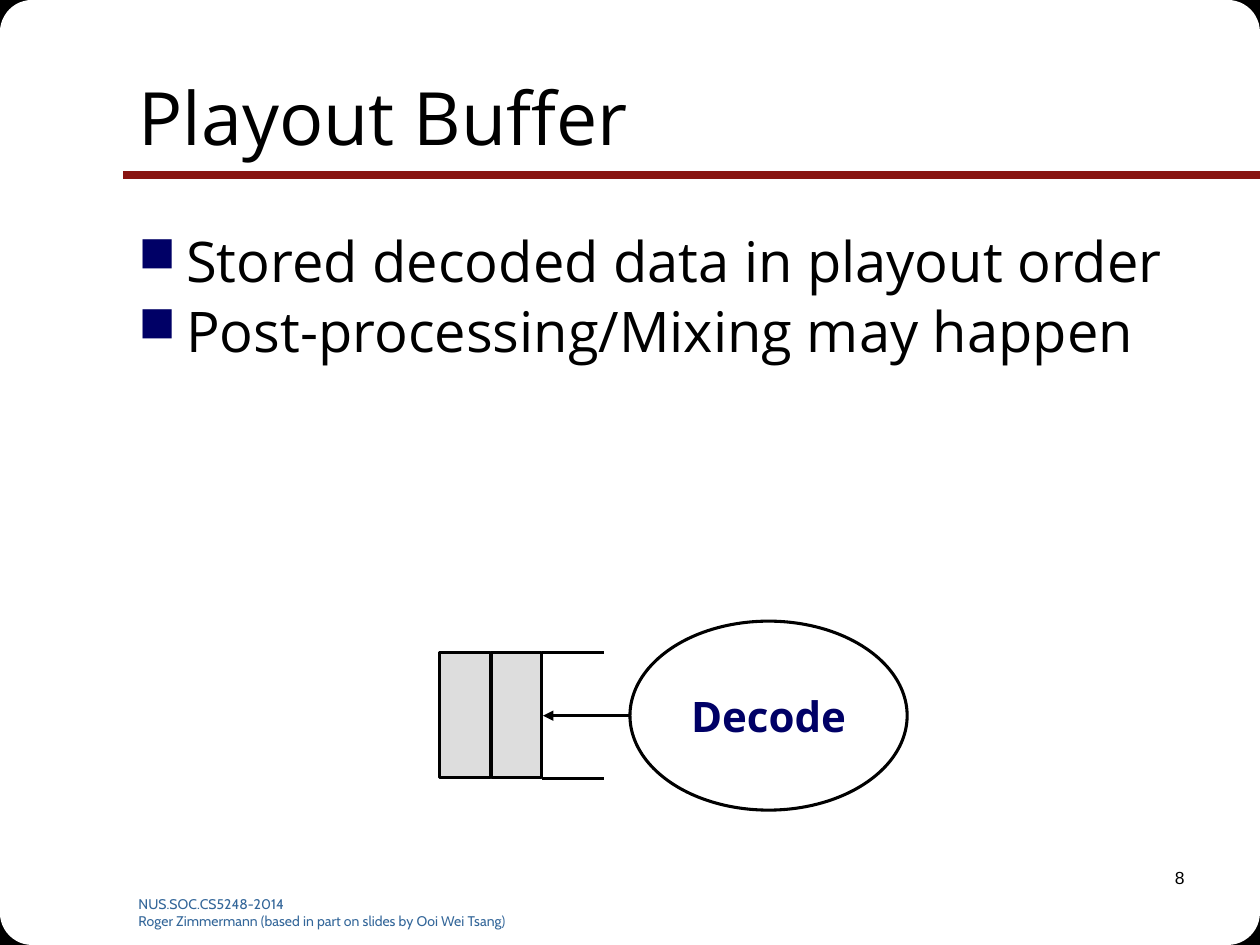
from dataclasses import dataclass
from itertools import product

from lxml import etree
from pptx import Presentation
from pptx.dml.color import RGBColor
from pptx.enum.shapes import MSO_CONNECTOR, MSO_SHAPE
from pptx.enum.text import MSO_ANCHOR, PP_ALIGN
from pptx.oxml.ns import qn
from pptx.util import Inches, Pt

RECT, ROUND, OVAL = MSO_SHAPE.RECTANGLE, MSO_SHAPE.ROUNDED_RECTANGLE, MSO_SHAPE.OVAL
LEFT, CENTER, RIGHT = PP_ALIGN.LEFT, PP_ALIGN.CENTER, PP_ALIGN.RIGHT
TOP, MIDDLE = MSO_ANCHOR.TOP, MSO_ANCHOR.MIDDLE
STRAIGHT = MSO_CONNECTOR.STRAIGHT
BLACK, WHITE, NAVY, RED, BLUE, GRAY = "000000", "FFFFFF", "000066", "891411", "336699", "DDDDDD"
WIDE, HIGH = 10, 7.5


@dataclass
class Box:
    x: float
    y: float
    w: float
    h: float

    def lengths(self):
        return [Inches(v) for v in (self.x, self.y, self.w, self.h)]


@dataclass
class Line:
    x1: float
    y1: float
    x2: float
    y2: float
    color: str = BLACK
    width: float = 1.75
    arrow: bool = False


def paint(target, color: str):
    target.rgb = RGBColor.from_string(color)


def write(shape, text: str, *, size: float, font="Open Sans", color=BLACK, bold=False,
          align=LEFT, anchor=TOP, wrap=True, before=0.0):
    frame = shape.text_frame
    frame.word_wrap = wrap
    frame.vertical_anchor = anchor
    frame.text = text
    for para in frame.paragraphs:
        para.alignment = align
        para.space_before = Pt(before)
        para.font.size = Pt(size)
        para.font.name = font
        para.font.bold = bold
        paint(para.font.color, color)


def bullet(para, color: str):
    props = para._p.get_or_add_pPr()
    props.set("marL", str(Inches(0.38)))
    props.set("indent", str(-Inches(0.38)))
    tint = etree.SubElement(props, qn("a:buClr"))
    etree.SubElement(tint, qn("a:srgbClr"), val=color)
    etree.SubElement(props, qn("a:buSzPct"), val="90000")
    etree.SubElement(props, qn("a:buChar"), char="■")


def draw_shape(slide, kind, box: Box, fill: str, edge="", width=1.75):
    shape = slide.shapes.add_shape(kind, *box.lengths())
    shape.shadow.inherit = False
    shape.fill.solid()
    paint(shape.fill.fore_color, fill)
    if edge:
        paint(shape.line.color, edge)
        shape.line.width = Pt(width)
    else:
        shape.line.fill.background()
    return shape


def draw_line(slide, line: Line):
    ends = [Inches(v) for v in (line.x1, line.y1, line.x2, line.y2)]
    link = slide.shapes.add_connector(STRAIGHT, *ends)
    paint(link.line.color, line.color)
    link.line.width = Pt(line.width)
    if line.arrow:
        etree.SubElement(link.line._get_or_add_ln(), qn("a:tailEnd"), type="triangle")
    etree.SubElement(link._element.spPr, qn("a:effectLst"))


def draw_corners(slide):
    for kind, w, h, fill, edge in ((RECT, 0.43, 0.44, BLACK, BLACK), (ROUND, 1.53, 1.53, WHITE, "")):
        for x, y in product((0, WIDE - w), (0, HIGH - h)):
            draw_shape(slide, kind, Box(x, y, w, h), fill, edge, 0.75)


def draw_text(slide, box: Box, text: str, **style):
    area = slide.shapes.add_textbox(*box.lengths())
    write(area, text, **style)
    return area


def draw_buffer(slide):
    oval = draw_shape(slide, OVAL, Box(5, 4.93, 2.2, 1.5), WHITE, BLACK)
    write(oval, "Decode", size=24, color=NAVY, bold=True, align=CENTER, anchor=MIDDLE, wrap=False)
    draw_line(slide, Line(4.99, 5.68, 4.31, 5.68, arrow=True))
    for x in (3.9, 3.49):
        draw_shape(slide, RECT, Box(x, 5.18, 0.4, 0.99), GRAY, BLACK)
    for y in (6.18, 5.18):
        draw_line(slide, Line(4.79, y, 4.3, y))


def main():
    deck = Presentation()
    deck.slide_width, deck.slide_height = Inches(WIDE), Inches(HIGH)
    slide = deck.slides.add_slide(deck.slide_layouts[5])
    slide.background.fill.solid()
    paint(slide.background.fill.fore_color, WHITE)
    draw_corners(slide)
    draw_line(slide, Line(WIDE, 1.39, 0.98, 1.39, RED, 4.5))

    title = slide.shapes.title
    title.left, title.top, title.width, title.height = Box(1, 0.3, 8.5, 1.25).lengths()
    write(title, "Playout Buffer", size=42, anchor=MIDDLE)
    slide.shapes._spTree.append(title._element)

    body = draw_text(slide, Box(1, 1.75, 8.5, 4.95),
                     "Stored decoded data in playout order\nPost-processing/Mixing may happen",
                     size=32, before=1.5)
    for para in body.text_frame.paragraphs:
        bullet(para, NAVY)

    draw_text(slide, Box(1, 7.06, 3.42, 0.28),
              "NUS.SOC.CS5248-2014\nRoger Zimmermann (based in part on slides by Ooi Wei Tsang)",
              size=8, font="Cabin", color=BLUE)
    draw_text(slide, Box(7.42, 6.83, 2.08, 0.5), "8", size=10, font="Arial", align=RIGHT)
    draw_buffer(slide)
    deck.save("out.pptx")


if __name__ == "__main__":
    main()
